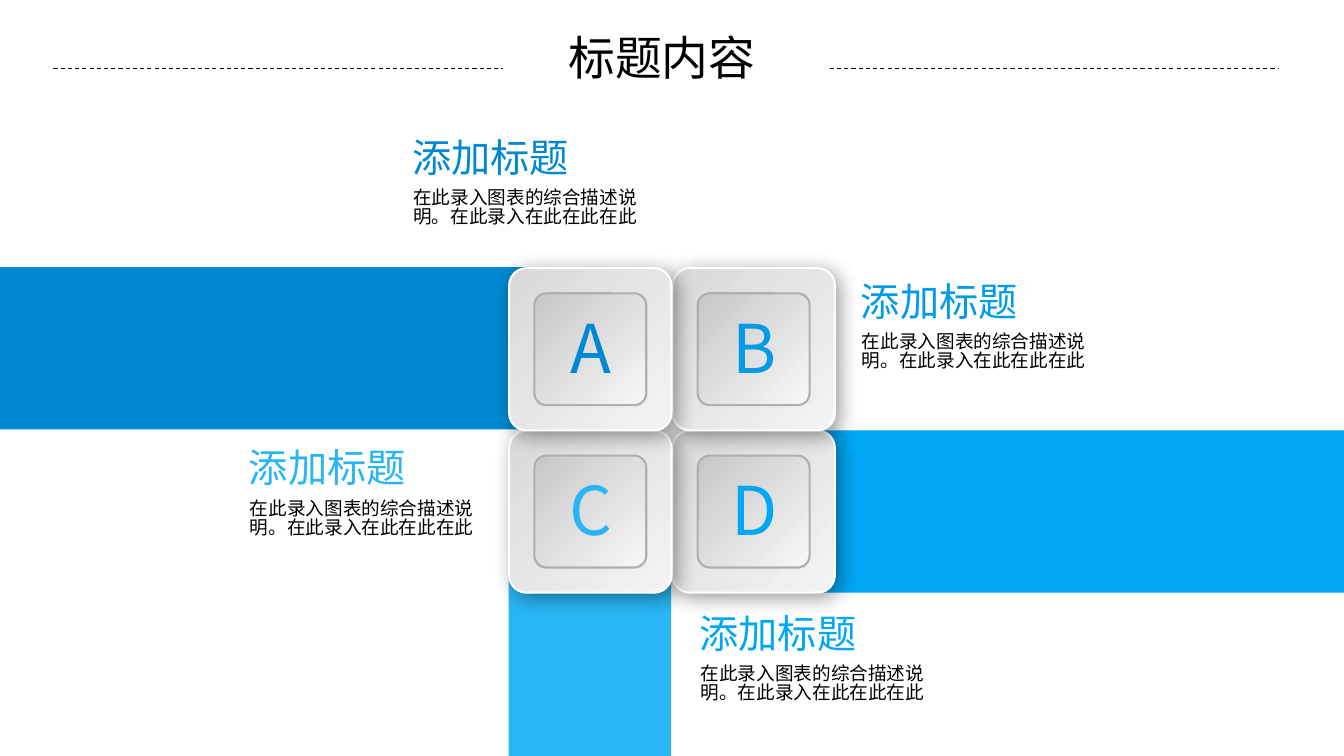
from dataclasses import dataclass

from lxml import etree
from pptx import Presentation
from pptx.dml.color import RGBColor
from pptx.enum.dml import MSO_LINE
from pptx.enum.shapes import MSO_CONNECTOR, MSO_SHAPE
from pptx.enum.text import MSO_AUTO_SIZE, PP_ALIGN
from pptx.oxml import parse_xml
from pptx.oxml.ns import nsdecls, qn
from pptx.util import Inches, Pt

ROUND = MSO_SHAPE.ROUNDED_RECTANGLE
STRAIGHT = MSO_CONNECTOR.STRAIGHT
DASH = MSO_LINE.DASH
GROW = MSO_AUTO_SIZE.SHAPE_TO_FIT_TEXT
LEFT, CENTER = PP_ALIGN.LEFT, PP_ALIGN.CENTER


@dataclass(frozen=True)
class Theme:
    font: str = "Noto Sans CJK SC"
    ink: str = "000000"
    a: str = "0089D2"
    b: str = "039BE6"
    c: str = "28B5F4"
    d: str = "00A7F3"
    rim: str = "FFFFFF"
    edge: str = "AFAFAF"
    tile: tuple = ("D9D9D9", "F3F3F3")
    key: tuple = ("C7C7C7", "F7F7F7")
    title: float = 33.4
    letter: float = 48
    head: float = 28
    body: float = 13.3
    leading: float = 0.84
    corner: float = 0.107


THEME = Theme()
SIDE = 1.61
BODY = "在此录入图表的综合描述说明。在此录入在此在此在此"


def rgb(code):
    return RGBColor.from_string(code)


def add_text(slide, box, text, size, color=THEME.ink, align=LEFT):
    shape = slide.shapes.add_textbox(*map(Inches, box))
    frame = shape.text_frame
    frame.word_wrap = True
    frame.auto_size = GROW
    # Lower the text slightly to offset the tight line spacing
    drop = size / 1000
    frame.margin_top = Inches(0.05 + drop)
    frame.margin_bottom = Inches(0.05 - drop)
    para = frame.paragraphs[0]
    para.alignment = align
    para.line_spacing = THEME.leading
    run = para.add_run()
    run.text = text
    run.font.size = Pt(size)
    run.font.name = THEME.font
    run.font.color.rgb = rgb(color)
    props = run.font._element
    etree.SubElement(props, qn("a:ea")).set("typeface", THEME.font)


def add_round(slide, box):
    shape = slide.shapes.add_shape(ROUND, *map(Inches, box))
    shape.adjustments[0] = THEME.corner
    shape.shadow.inherit = False
    return shape


def add_bar(slide, box, color, turn=0):
    bar = add_round(slide, box)
    bar.rotation = turn
    bar.fill.solid()
    bar.fill.fore_color.rgb = rgb(color)
    bar.line.fill.background()


def add_panel(slide, box, shades, line):
    """Add a rounded square shaded from its top left corner."""
    panel = add_round(slide, box)
    panel.fill.gradient()
    panel.fill.gradient_angle = 315
    for stop, shade in zip(panel.fill.gradient_stops, shades):
        stop.color.rgb = rgb(shade)
    panel.line.color.rgb = rgb(line)
    panel.line.width = Pt(1.5)
    return panel


def cast_shadow(shape):
    props = shape._element.spPr
    props.remove(props.find(qn("a:effectLst")))
    props.append(parse_xml(
        f'<a:effectLst {nsdecls("a")}>'
        f'<a:outerShdw blurRad="{Pt(15)}" dist="{Pt(4)}" dir="2700000" '
        'algn="tl" rotWithShape="0"><a:srgbClr val="000000">'
        '<a:alpha val="40000"/></a:srgbClr></a:outerShdw></a:effectLst>'))


def add_tile(slide, left, top):
    tile = add_panel(slide, (left, top, SIDE, SIDE), THEME.tile, THEME.rim)
    cast_shadow(tile)
    gap = 0.25
    side = SIDE - 2 * gap
    add_panel(slide, (left + gap, top + gap, side, side), THEME.key, THEME.edge)


def add_grid(slide, left, top):
    """Add the four lettered tiles, the last one at the back."""
    spots = [(left + col * 1.62, top + row * SIDE)
             for row in range(2) for col in range(2)]
    for spot in reversed(spots):
        add_tile(slide, *spot)
    colors = (THEME.a, THEME.b, THEME.c, THEME.d)
    for (x, y), letter, color in zip(spots, "ABCD", colors):
        add_text(slide, (x + 0.28, y + 0.41, 1.06, 0.91), letter,
                 size=THEME.letter, color=color, align=CENTER)


def add_note(slide, left, top, color):
    add_text(slide, (left, top, 3.38, 0.57), "添加标题",
             size=THEME.head, color=color)
    add_text(slide, (left + 0.01, top + 0.5, 2.52, 0.55), BODY,
             size=THEME.body)


def add_header(slide, left, top):
    add_text(slide, (left, top, 2.31, 0.66), "标题内容",
             size=THEME.title, align=CENTER)
    y = Inches(top + 0.39)
    for start in (8.23, 0.53):
        rule = slide.shapes.add_connector(
            STRAIGHT, Inches(start), y, Inches(start + 4.46), y)
        rule.line.color.rgb = rgb(THEME.ink)
        rule.line.width = Pt(0.75)
        rule.line.dash_style = DASH
        etree.SubElement(rule._element.spPr, qn("a:effectLst"))


def main():
    deck = Presentation()
    deck.slide_width, deck.slide_height = Inches(13.33), Inches(7.5)
    slide = deck.slides.add_slide(deck.slide_layouts[6])
    add_header(slide, 5.41, 0.29)
    add_bar(slide, (3.96, 6.43, 3.78, SIDE), THEME.c, turn=90)
    add_bar(slide, (7.78, 4.27, 6.1, SIDE), THEME.d)
    add_bar(slide, (-0.23, 2.65, 5.78, SIDE), THEME.a)
    add_grid(slide, 5.05, 2.66)
    add_note(slide, 8.44, 2.75, THEME.b)
    add_note(slide, 2.37, 4.4, THEME.c)
    add_note(slide, 3.99, 1.32, THEME.a)
    add_note(slide, 6.84, 6.04, THEME.d)
    deck.save("out.pptx")


if __name__ == "__main__":
    main()
